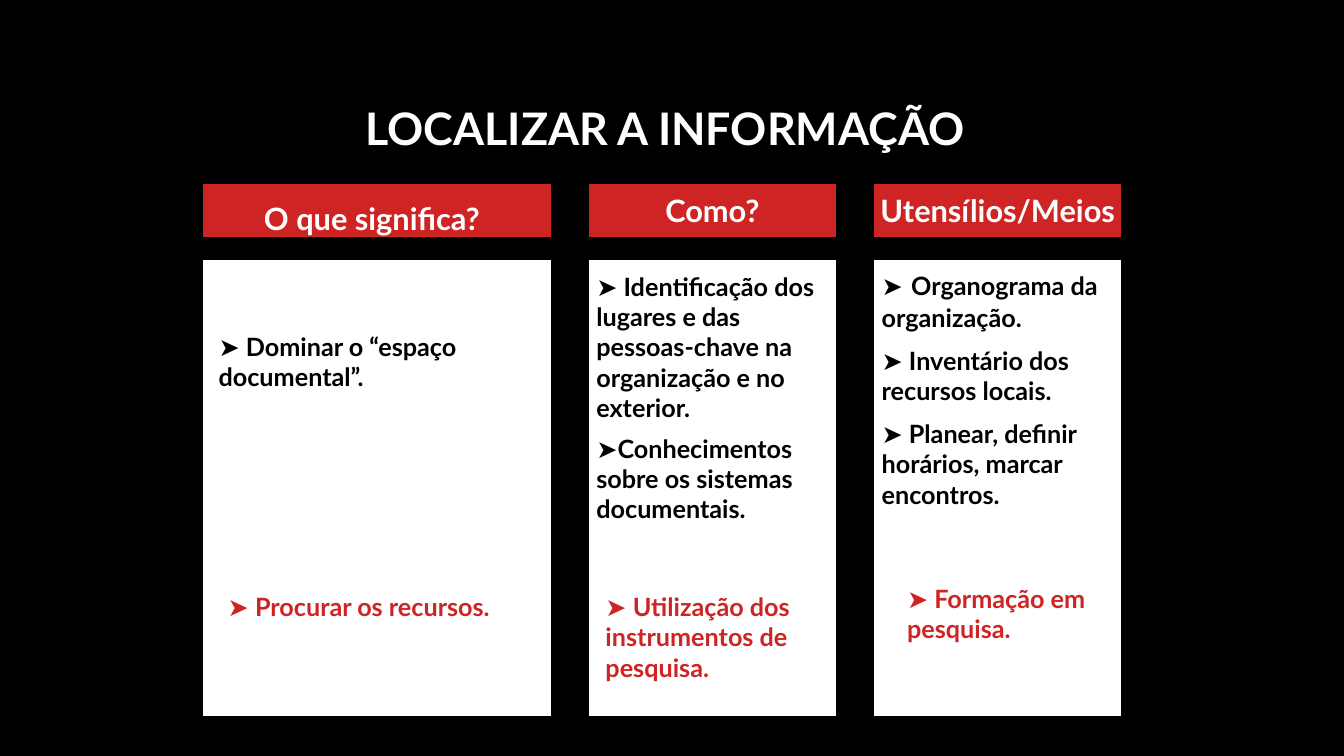
from pptx import Presentation
from pptx.dml.color import RGBColor
from pptx.enum.shapes import MSO_SHAPE
from pptx.enum.text import MSO_ANCHOR, PP_ALIGN
from pptx.util import Cm, Pt

BLACK = RGBColor(0x00, 0x00, 0x00)
WHITE = RGBColor(0xFF, 0xFF, 0xFF)
RED = RGBColor(0xCE, 0x24, 0x24)

HEADING = "LOCALIZAR A INFORMAÇÃO"
HEADER_TOP, HEADER_HEIGHT = 4.57, 1.47
PANEL_TOP, PANEL_HEIGHT = 6.48, 11.63

COLUMNS = [
    {
        "left": 5.05, "width": 8.89,
        "question": "O que significa?", "question_box": (5.26, 4.9, 8.23, 1.19),
        "points": [("➤ Dominar o “espaço documental”.",)],
        "points_box": (5.26, 8.23, 8.46, 1.78), "gap": 9,
        "highlight": "➤ Procurar os recursos.",
        "highlight_box": (5.49, 14.78, 8.26, 1.02),
    },
    {
        "left": 14.78, "width": 6.35,
        "question": "Como?", "question_box": None,
        "points": [
            ("➤ Identificação dos lugares e das pessoas-chave na organização e no exterior.",),
            ("➤Conhecimentos sobre os sistemas documentais.",),
        ],
        "points_box": (14.78, 6.71, 6.35, 6.65), "gap": 7.5,
        "highlight": "➤ Utilização dos instrumentos de pesquisa.",
        "highlight_box": (15.01, 14.78, 6.15, 2.54),
    },
    {
        "left": 21.97, "width": 6.35,
        "question": "Utensílios/Meios", "question_box": None,
        "points": [
            ("➤", " ", "Organograma da organização."),
            ("➤ Inventário dos recursos locais.",),
            ("➤ Planear, definir horários, marcar encontros.",),
        ],
        "points_box": (21.97, 6.48, 6.35, 6.6), "gap": 9,
        "highlight": "➤ Formação em pesquisa.",
        "highlight_box": (22.61, 14.58, 5.51, 1.78),
    },
]


def set_font(font, size, color, name="Lato", bold=True):
    font.name, font.size, font.bold = name, Pt(size), bold
    font.color.rgb = color


def add_panel(slide, box, color):
    panel = slide.shapes.add_shape(MSO_SHAPE.RECTANGLE, *map(Cm, box))
    panel.shadow.inherit = False
    panel.fill.solid()
    panel.fill.fore_color.rgb = color
    panel.line.color.rgb = BLACK
    panel.line.width = Pt(3.5)
    return panel


def add_text_frame(slide, box):
    frame = slide.shapes.add_textbox(*map(Cm, box)).text_frame
    frame.word_wrap = True
    return frame


def write_line(frame, text, size, color, align):
    paragraph = frame.paragraphs[0]
    paragraph.text = text
    paragraph.alignment = align
    set_font(paragraph.font, size, color)
    return paragraph


def write_points(frame, points, gap):
    for index, pieces in enumerate(points):
        paragraph = frame.add_paragraph() if index else frame.paragraphs[0]
        if index:
            paragraph.space_before = Pt(gap)
        if len(pieces) == 1:
            paragraph.text = pieces[0]
            set_font(paragraph.font, 18, BLACK)
            continue
        for piece in pieces:
            run = paragraph.add_run()
            run.text = piece
            if piece.isspace():
                set_font(run.font, 24, BLACK, "Times New Roman", False)
            else:
                set_font(run.font, 18, BLACK)


def add_column(slide, column):
    left, width = column["left"], column["width"]
    add_panel(slide, (left, PANEL_TOP, width, PANEL_HEIGHT), WHITE)
    header = add_panel(slide, (left, HEADER_TOP, width, HEADER_HEIGHT), RED)
    if column["question_box"]:
        question = add_text_frame(slide, column["question_box"])
    else:
        question = header.text_frame
        question.word_wrap = False
        question.vertical_anchor = MSO_ANCHOR.MIDDLE
    write_line(question, column["question"], 22, WHITE, PP_ALIGN.CENTER)
    write_points(add_text_frame(slide, column["points_box"]), column["points"], column["gap"])
    highlight = add_text_frame(slide, column["highlight_box"])
    write_line(highlight, column["highlight"], 18, RED, PP_ALIGN.LEFT)


def main():
    """Build the three-column slide on locating information."""
    deck = Presentation()
    deck.slide_width, deck.slide_height = Cm(33.87), Cm(19.05)
    slide = deck.slides.add_slide(deck.slide_layouts[5])
    slide.background.fill.solid()
    slide.background.fill.fore_color.rgb = BLACK

    title = slide.shapes.title
    title.left, title.top, title.width, title.height = map(Cm, (0, 1.7, 33.53, 2.34))
    title.text_frame.vertical_anchor = MSO_ANCHOR.BOTTOM
    heading = write_line(title.text_frame, HEADING, 32, WHITE, PP_ALIGN.CENTER)
    heading.line_spacing = 0.9

    for column in COLUMNS:
        add_column(slide, column)
    deck.save("out.pptx")


if __name__ == "__main__":
    main()
